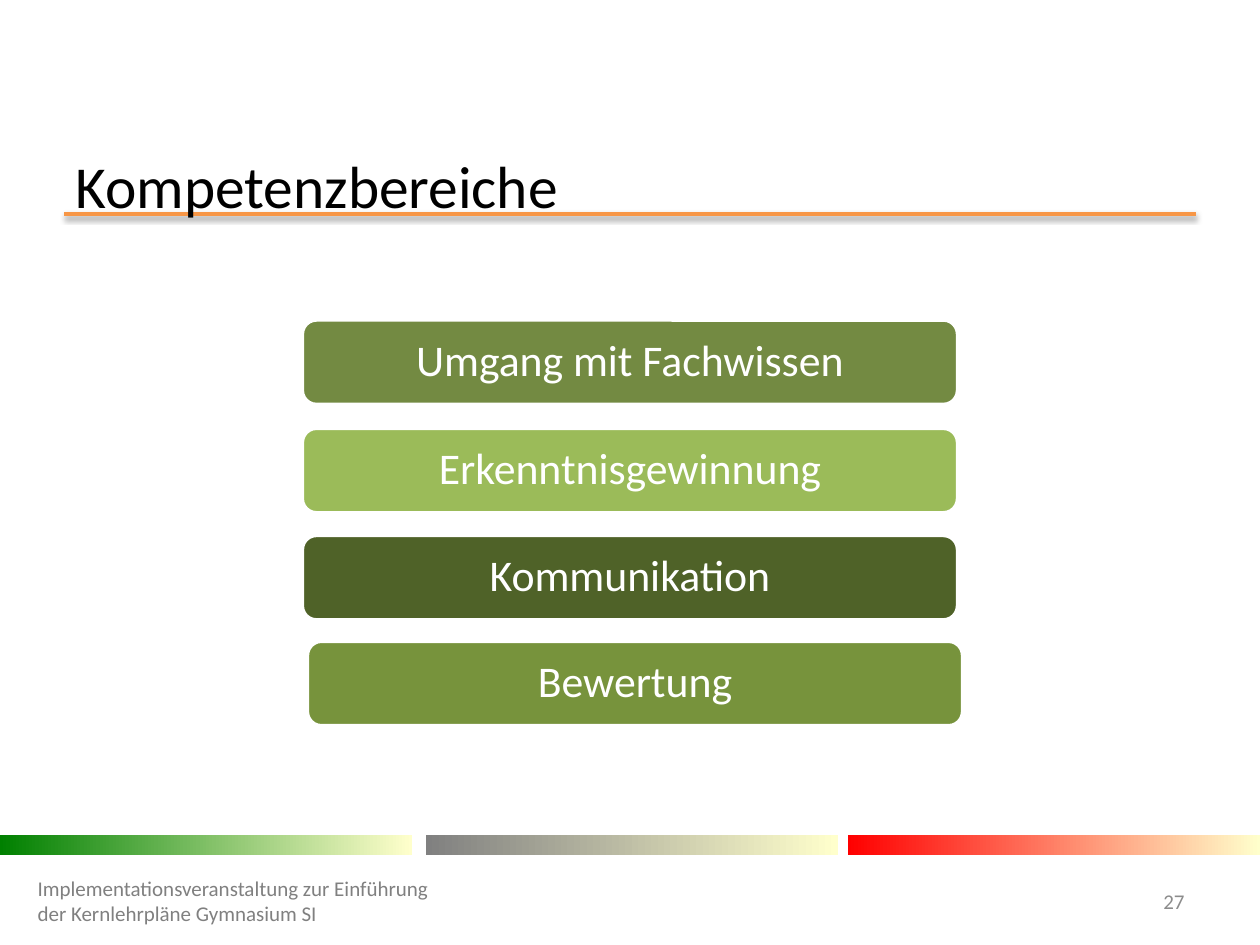
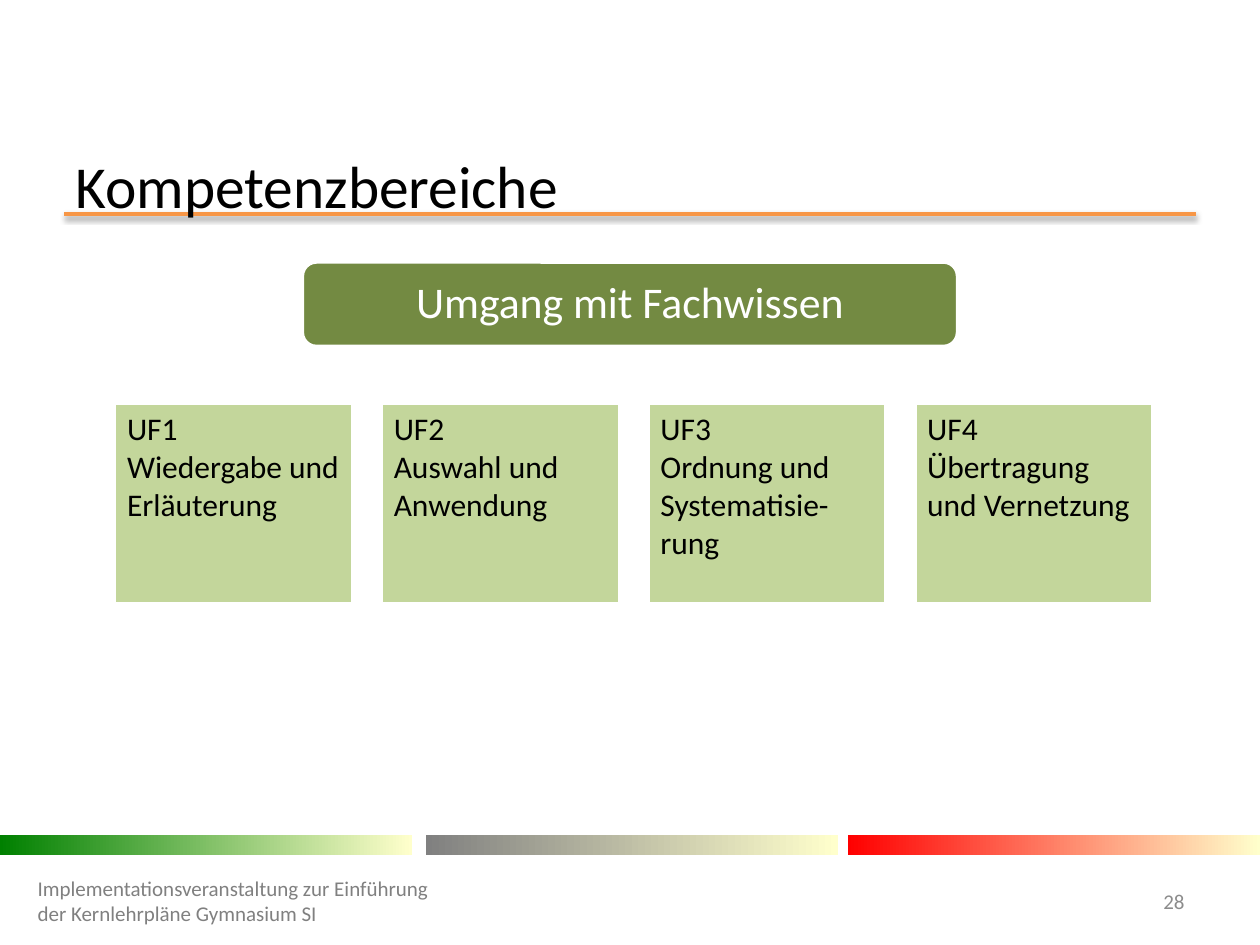
from dataclasses import dataclass

from lxml import etree
from pptx import Presentation
from pptx.dml.color import RGBColor
from pptx.enum.shapes import MSO_CONNECTOR, MSO_SHAPE
from pptx.enum.text import MSO_ANCHOR, MSO_AUTO_SIZE, PP_ALIGN
from pptx.oxml import parse_xml
from pptx.oxml.ns import nsdecls, qn
from pptx.util import Inches, Pt

LEFT, CENTER, RIGHT = PP_ALIGN.LEFT, PP_ALIGN.CENTER, PP_ALIGN.RIGHT
TOP, MIDDLE = MSO_ANCHOR.TOP, MSO_ANCHOR.MIDDLE
RECT, ROUND_RECT = MSO_SHAPE.RECTANGLE, MSO_SHAPE.ROUNDED_RECTANGLE
STRAIGHT, NO_AUTOFIT = MSO_CONNECTOR.STRAIGHT, MSO_AUTO_SIZE.NONE

FONT = "Calibri"
BLACK = RGBColor(0x00, 0x00, 0x00)
WHITE = RGBColor(0xFF, 0xFF, 0xFF)
ORANGE = RGBColor(0xF7, 0x96, 0x46)
CREAM = RGBColor(0xFF, 0xFF, 0xCC)
GREEN = RGBColor(0x00, 0x80, 0x00)
GREY = RGBColor(0x80, 0x80, 0x80)
RED = RGBColor(0xFF, 0x00, 0x00)
NUMBER_GREY = RGBColor(0x8C, 0x8C, 0x8C)
OLIVE = RGBColor(0x73, 0x8A, 0x42)
LIGHT_GREEN = RGBColor(0x9B, 0xBB, 0x59)
DARK_GREEN = RGBColor(0x4F, 0x62, 0x28)
MID_GREEN = RGBColor(0x77, 0x93, 0x3C)
PALE_GREEN = RGBColor(0xC3, 0xD6, 0x9B)

# The slide is a grid of 100 columns by 75 rows of equal square cells.
COLS, ROWS = 100, 75
CELL = Inches(0.1)

TITLE = "Kompetenzbereiche"
FOOTER = "Implementationsveranstaltung zur Einführung der Kernlehrpläne Gymnasium SI"
FIRST_NUMBER = 27


@dataclass(frozen=True)
class Box:
    """A place on the grid, in columns and rows."""
    col: float
    row: float
    cols: float
    rows: float

    def emu(self) -> tuple[int, ...]:
        return tuple(round(n * CELL) for n in (self.col, self.row, self.cols, self.rows))


@dataclass(frozen=True)
class Band:
    col: float
    color: RGBColor


@dataclass(frozen=True)
class Area:
    """A bar naming one area of competence."""
    text: str
    color: RGBColor
    row: float
    col: float = 24


BANDS = (Band(0, GREEN), Band(33.8, GREY), Band(67.3, RED))

AREAS = (
    Area("Umgang mit Fachwissen", OLIVE, 25.4),
    Area("Erkenntnisgewinnung", LIGHT_GREEN, 34),
    Area("Kommunikation", DARK_GREEN, 42.5),
    Area("Bewertung", MID_GREEN, 50.9, col=24.4),
)
HEADING = Area("Umgang mit Fachwissen", OLIVE, 20.8)

SKILLS = (
    "UF1\nWiedergabe und Erläuterung",
    "UF2\nAuswahl und Anwendung",
    "UF3\nOrdnung und Systematisie-rung",
    "UF4\nÜbertragung und Vernetzung",
)
SKILLS_LEFT, SKILLS_RIGHT, SKILL_COLS = 9.1, 91.5, 18.9


def write(shape, text: str, *, size: float, color: RGBColor, align=LEFT,
          anchor=MIDDLE, spacing: float = 1.0) -> None:
    """Fill a shape with text, one paragraph for each line."""
    tf = shape.text_frame
    tf.text = text
    tf.word_wrap = True
    tf.auto_size = NO_AUTOFIT
    tf.vertical_anchor = anchor
    for p in tf.paragraphs:
        p.alignment = align
        p.line_spacing = spacing
        for r in p.runs:
            r.font.name = FONT
            r.font.size = Pt(size)
            r.font.color.rgb = color


def add_text(slide, box: Box, text: str, **fmt) -> None:
    write(slide.shapes.add_textbox(*box.emu()), text, **fmt)


def add_panel(slide, kind, box: Box, fill: RGBColor, text: str, **fmt) -> None:
    """Draw a filled shape with a white outline and text."""
    sp = slide.shapes.add_shape(kind, *box.emu())
    sp.shadow.inherit = False
    sp.fill.solid()
    sp.fill.fore_color.rgb = fill
    sp.line.color.rgb = WHITE
    sp.line.width = Pt(2)
    write(sp, text, **fmt)


def add_area(slide, area: Area) -> None:
    add_panel(slide, ROUND_RECT, Box(area.col, area.row, 52, 6.7), area.color,
              area.text, size=25, color=WHITE, align=CENTER, spacing=0.9)


def add_band(slide, band: Band) -> None:
    sp = slide.shapes.add_shape(RECT, *Box(band.col, 66.3, 32.7, 1.6).emu())
    sp.shadow.inherit = False
    sp.line.fill.background()
    sp.fill.gradient()
    sp.fill.gradient_angle = 0
    for stop, color in zip(sp.fill.gradient_stops, (band.color, CREAM)):
        stop.color.rgb = color


def add_title_rule(slide) -> None:
    """Draw the orange line with its soft shadow below."""
    x, y, width, _ = Box(5.1, 17, 89.8, 0).emu()
    rule = slide.shapes.add_connector(STRAIGHT, x, y, x + width, y)
    rule.line.color.rgb = ORANGE
    rule.line.width = Pt(2)
    effects = etree.SubElement(rule.element.spPr, qn("a:effectLst"))
    effects.append(parse_xml(
        f'<a:outerShdw {nsdecls("a")} blurRad="{Pt(3.1)}" dist="{Pt(1.6)}" '
        'dir="5400000" rotWithShape="0"><a:srgbClr val="000000">'
        '<a:alpha val="38000"/></a:srgbClr></a:outerShdw>'))


def add_base_slide(prs):
    """Add a slide with title, rule, bands, footer and number."""
    slide = prs.slides.add_slide(prs.slide_layouts.get_by_name("Title Only"))
    add_title_rule(slide)
    for band in BANDS:
        add_band(slide, band)

    title = slide.shapes.title
    title.left, title.top, title.width, title.height = Box(5, 12.3, 90, 4.7).emu()
    write(title, TITLE, size=34, color=BLACK)
    title.element.getparent().append(title.element)  # in front of the rule

    number = FIRST_NUMBER + len(prs.slides) - 1
    add_text(slide, Box(2, 69.5, 33.1, 4), FOOTER, size=12, color=GREY)
    add_text(slide, Box(88.6, 69.5, 6.4, 4), str(number), size=12,
             color=NUMBER_GREY, align=RIGHT)
    return slide


def build_areas(prs) -> None:
    slide = add_base_slide(prs)
    for area in AREAS:
        add_area(slide, area)


def build_skills(prs) -> None:
    slide = add_base_slide(prs)
    add_area(slide, HEADING)
    pitch = (SKILLS_RIGHT - SKILLS_LEFT - SKILL_COLS) / (len(SKILLS) - 1)
    for i, skill in enumerate(SKILLS):
        add_panel(slide, RECT, Box(SKILLS_LEFT + i * pitch, 32, SKILL_COLS, 15.9),
                  PALE_GREEN, skill, size=18, color=BLACK, anchor=TOP)


def main() -> None:
    prs = Presentation()
    prs.slide_width, prs.slide_height = COLS * CELL, ROWS * CELL
    build_areas(prs)
    build_skills(prs)
    prs.save("out.pptx")


if __name__ == "__main__":
    main()
